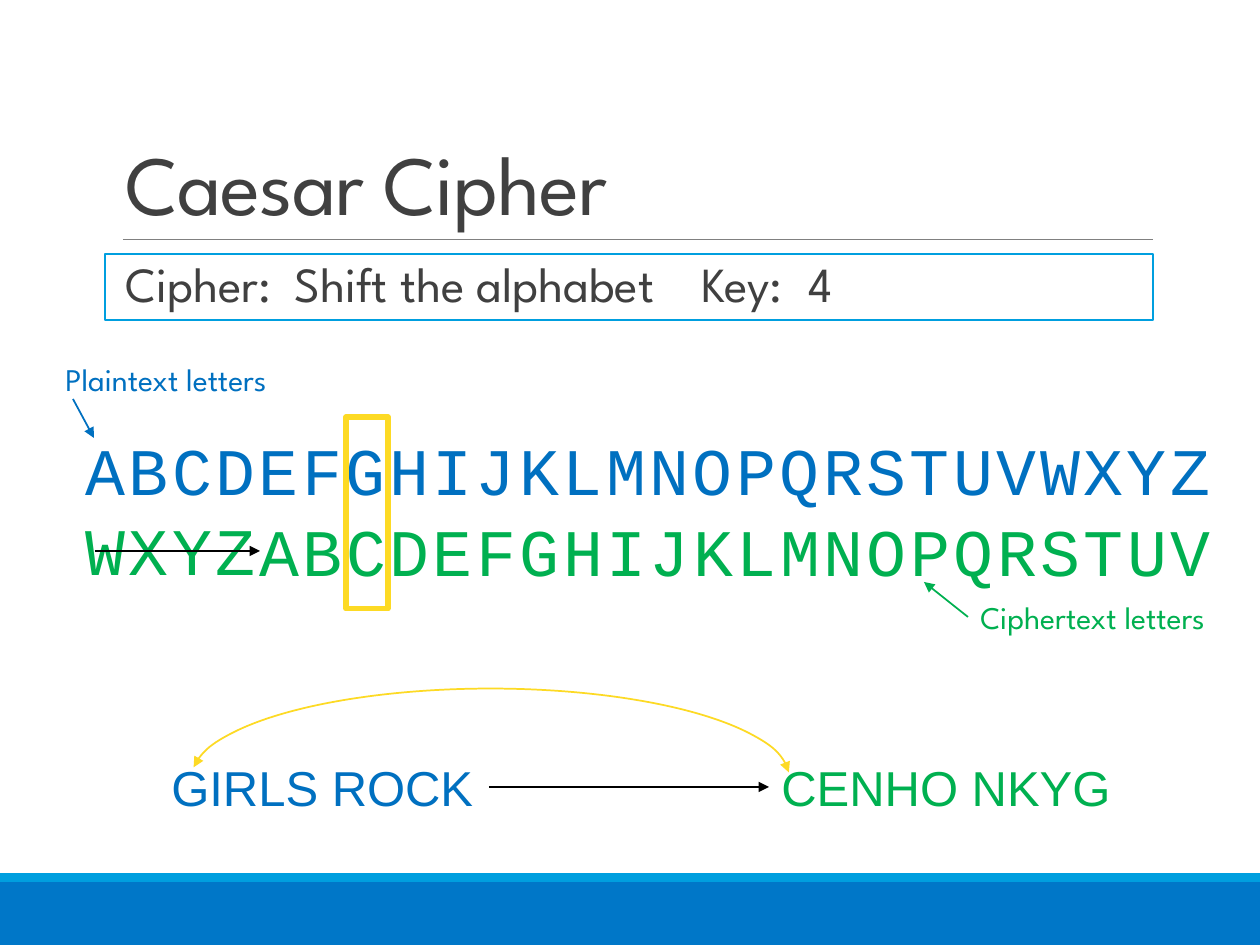
from lxml.etree import SubElement
from pptx import Presentation
from pptx.dml.color import RGBColor
from pptx.enum.shapes import MSO_CONNECTOR as Connector, MSO_SHAPE as Shape
from pptx.enum.text import MSO_ANCHOR as Anchor, MSO_AUTO_SIZE as AutoSize
from pptx.oxml.ns import qn
from pptx.util import Pt

PX = 914400 / 126  # EMU per pixel


class Theme:
    blue, green, yellow = "0070C0", "00B050", "FDDA24"
    bar, accent, rule = "0077C8", "009FDF", "808080"
    ink, black, white = "404040", "000000", "FFFFFF"
    display, mono, sans = "League Spartan", "Courier New", "Arial"
    title_size, letter_size, body_size, label_size = 48, 38, 28, 18


def add_text(text, box, font_name, size, color, spacing=0, wrap=False):
    text_box = slide.shapes.add_textbox(*[round(v * PX) for v in box])
    frame = text_box.text_frame
    frame.text = text
    frame.word_wrap = wrap
    frame.auto_size = AutoSize.NONE if wrap else AutoSize.SHAPE_TO_FIT_TEXT
    for run in frame.paragraphs[0].runs:
        run.font.name = font_name
        run.font.size = Pt(size)
        run.font.color.rgb = RGBColor.from_string(color)
        if spacing:
            run._r.get_or_add_rPr().set("spc", str(round(spacing * 100)))
    return text_box


def add_line(ends, color, width=1, arrow=True):
    line = slide.shapes.add_connector(Connector.STRAIGHT, *[round(v * PX) for v in ends])
    line.line.color.rgb = RGBColor.from_string(color)
    line.line.width = Pt(width)
    if arrow:
        SubElement(line.line._get_or_add_ln(), qn("a:tailEnd"), type="triangle")
    SubElement(line._element.spPr, qn("a:effectLst"))
    return line


presentation = Presentation()
presentation.slide_width = round(1260 * PX)
presentation.slide_height = round(945 * PX)
slide = presentation.slides.add_slide(presentation.slide_layouts[6])

# Footer bars, title rule and frame of the cipher line
for box, fill, outline in [
    ((0, 882, 1260, 63), Theme.bar, None),
    ((0, 873, 1260, 9), Theme.accent, None),
    ((105, 254, 1048, 66), Theme.white, Theme.accent),
]:
    panel = slide.shapes.add_shape(Shape.RECTANGLE, *[round(v * PX) for v in box])
    panel.shadow.inherit = False
    panel.fill.solid()
    panel.fill.fore_color.rgb = RGBColor.from_string(fill)
    if outline:
        panel.line.color.rgb = RGBColor.from_string(outline)
        panel.line.width = Pt(1.25)
    else:
        panel.line.fill.background()
add_line((123, 239, 1153, 239), Theme.rule, 0.5, arrow=False)

# Title
title = add_text("Caesar Cipher", (113, 39, 1040, 200), Theme.display,
                 Theme.title_size, Theme.ink, -0.5, wrap=True)
title.text_frame.vertical_anchor = Anchor.BOTTOM
title.text_frame.paragraphs[0].line_spacing = 0.85

# Cipher and key, set on tab stops
cipher_line = add_text("Cipher:\tShift the alphabet\tKey:\t4", (113, 254, 1040, 59),
                       Theme.display, Theme.body_size, Theme.ink, wrap=True)
paragraph = cipher_line.text_frame.paragraphs[0]
paragraph.line_spacing = 0.9
paragraph.space_before = Pt(12)
paragraph.space_after = Pt(2)
tab_list = SubElement(paragraph._p.get_or_add_pPr(), qn("a:tabLst"))
for stop in (169, 576, 683):
    SubElement(tab_list, qn("a:tab"), pos=str(round(stop * PX)), algn="l")

# Plaintext and ciphertext alphabets, the latter shifted by the key
alphabet = "ABCDEFGHIJKLMNOPQRSTUVWXYZ"
key = 4
for letters, box, color in [
    (alphabet, (73, 423, 1163, 93), Theme.blue),
    (alphabet[:-key], (247, 504, 989, 93), Theme.green),
    (alphabet[-key:], (73, 503, 200, 93), Theme.green),
]:
    add_text(letters, box, Theme.mono, Theme.letter_size, color, 2)
add_line((95, 551, 260, 551), Theme.black)

# Labels of the two alphabets
add_text("Plaintext letters", (53, 354, 256, 50), Theme.display, Theme.label_size, Theme.blue)
add_line((73, 399, 94, 438), Theme.blue)
cipher_label = add_text("Ciphertext letters", (968, 592, 287, 50), Theme.display,
                        Theme.label_size, Theme.green)
add_line((968, 617, 924, 582), Theme.green).begin_connect(cipher_label, 1)

# Example message
plain_message = add_text("GIRLS ROCK", (159, 751, 330, 72), Theme.sans,
                         Theme.body_size, Theme.blue)
cipher_message = add_text("CENHO NKYG", (769, 751, 358, 72), Theme.sans,
                          Theme.body_size, Theme.green)
message_arrow = add_line((489, 787, 769, 787), Theme.black)
message_arrow.begin_connect(plain_message, 3)
message_arrow.end_connect(cipher_message, 1)

# Yellow highlight of one letter pair, and the arc between its two uses
highlight = slide.shapes.add_shape(Shape.RECTANGLE, *[round(v * PX) for v in (346, 417, 42, 192)])
arc = slide.shapes.add_shape(Shape.ARC, *[round(v * PX) for v in (401, 479, 179, 598)])
for shape, width in ((highlight, 3), (arc, 1)):
    shape.shadow.inherit = False
    shape.fill.background()
    shape.line.color.rgb = RGBColor.from_string(Theme.yellow)
    shape.line.width = Pt(width)
arc.rotation = 270
for index, degrees in enumerate((272.08, 88.91)):
    arc.adjustments[index] = degrees * 0.6  # 60000 units per degree, scaled by 100000
for end in ("a:headEnd", "a:tailEnd"):
    SubElement(arc.line._get_or_add_ln(), qn(end), type="triangle")

presentation.save("out.pptx")
